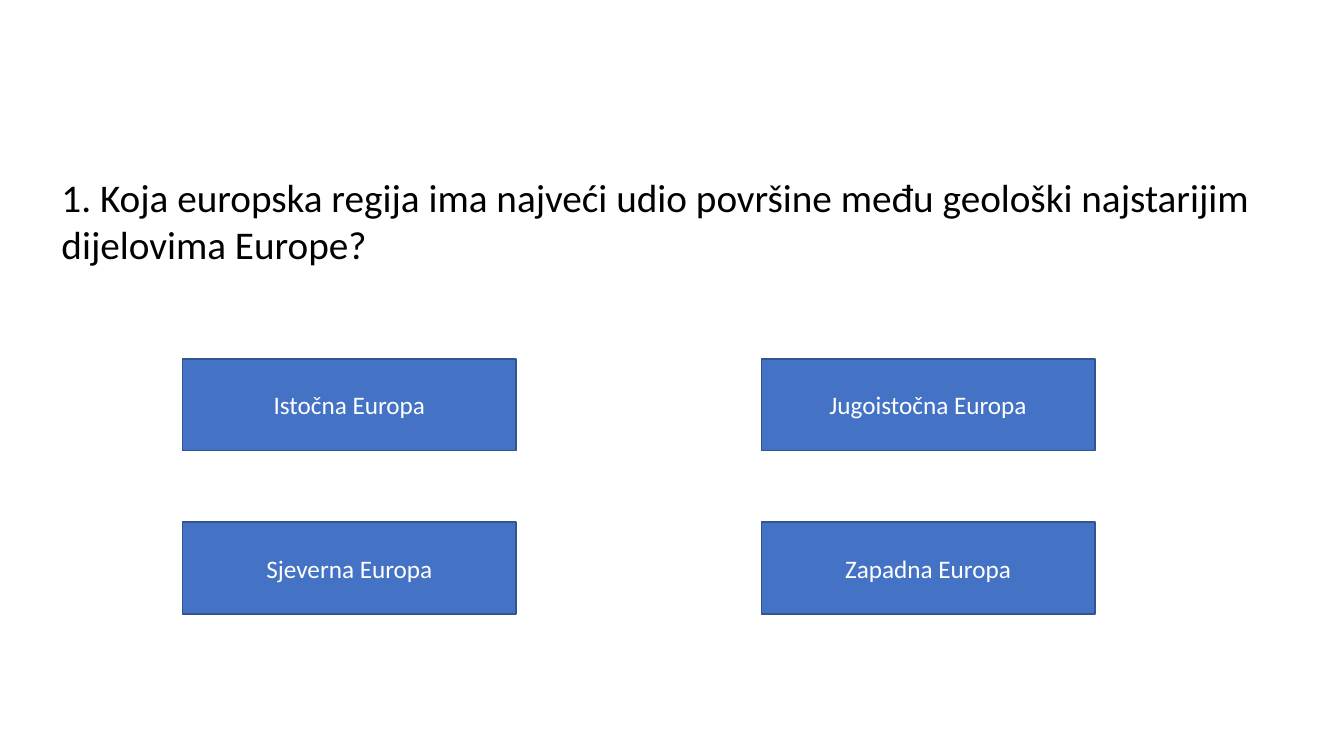
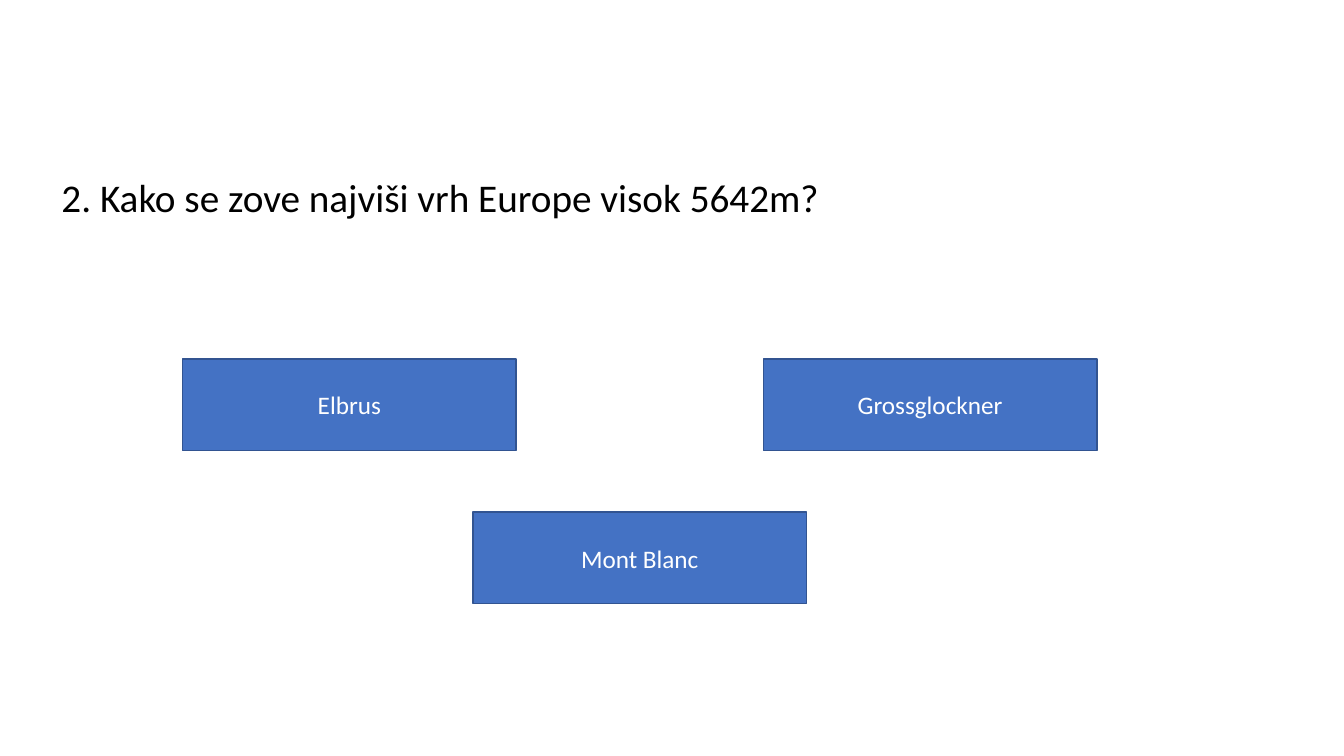
from pptx import Presentation
from pptx.dml.color import RGBColor
from pptx.enum.shapes import MSO_SHAPE
from pptx.enum.text import MSO_ANCHOR, MSO_AUTO_SIZE, PP_ALIGN
from pptx.util import Inches, Pt

FONT = "Calibri"
BLACK, WHITE = "000000", "FFFFFF"
BLUE, DARK_BLUE = "4472C4", "325491"
TITLE_ONLY = 5

LEFT, TOP = 1.81, 3.56
ANSWER_W, ANSWER_H = 3.31, 0.91


def rgb(value):
    return RGBColor.from_string(value)


def style(p, size, color, align):
    p.alignment = align
    p.font.name = FONT
    p.font.size = Pt(size)
    p.font.color.rgb = rgb(color)


def add_question(prs, text, height):
    """Add a slide with the question as its title."""
    s = prs.slides.add_slide(prs.slide_layouts[TITLE_ONLY])
    title = s.shapes.title
    title.left, title.top = Inches(0.51), Inches(1.67)
    title.width, title.height = Inches(12.46), Inches(height)
    tf = title.text_frame
    tf.text = text
    tf.word_wrap = True
    tf.auto_size = MSO_AUTO_SIZE.SHAPE_TO_FIT_TEXT
    tf.vertical_anchor = MSO_ANCHOR.TOP
    style(tf.paragraphs[0], 28, BLACK, PP_ALIGN.LEFT)
    return s


def add_answer(s, text, left, top):
    sp = s.shapes.add_shape(MSO_SHAPE.RECTANGLE, Inches(left), Inches(top),
                            Inches(ANSWER_W), Inches(ANSWER_H))
    sp.shadow.inherit = False
    sp.fill.solid()
    sp.fill.fore_color.rgb = rgb(BLUE)
    sp.line.color.rgb = rgb(DARK_BLUE)
    sp.line.width = Pt(1)
    tf = sp.text_frame
    tf.text = text
    tf.word_wrap = True
    tf.vertical_anchor = MSO_ANCHOR.MIDDLE
    style(tf.paragraphs[0], 18, WHITE, PP_ALIGN.CENTER)


def add_answers(s, answers, step_x, step_y):
    """Place (text, column, row) answers on a grid with the given steps."""
    for text, column, row in answers:
        add_answer(s, text, LEFT + column * step_x, TOP + row * step_y)


def main():
    prs = Presentation()
    prs.slide_width, prs.slide_height = Inches(13.33), Inches(7.5)

    s = add_question(prs, "1. Koja europska regija ima najveći udio površine "
                          "među geološki najstarijim dijelovima Europe?", 1.04)
    add_answers(s, [("Istočna Europa", 0, 0), ("Jugoistočna Europa", 1, 0),
                    ("Sjeverna Europa", 0, 1), ("Zapadna Europa", 1, 1)],
                step_x=5.74, step_y=1.62)

    s = add_question(prs, "2. Kako se zove najviši vrh Europe visok 5642m?", 0.57)
    add_answers(s, [("Elbrus", 0, 0), ("Mont Blanc", 1, 1),
                    ("Grossglockner", 2, 0)],
                step_x=2.88, step_y=1.52)

    prs.save("out.pptx")


if __name__ == "__main__":
    main()
